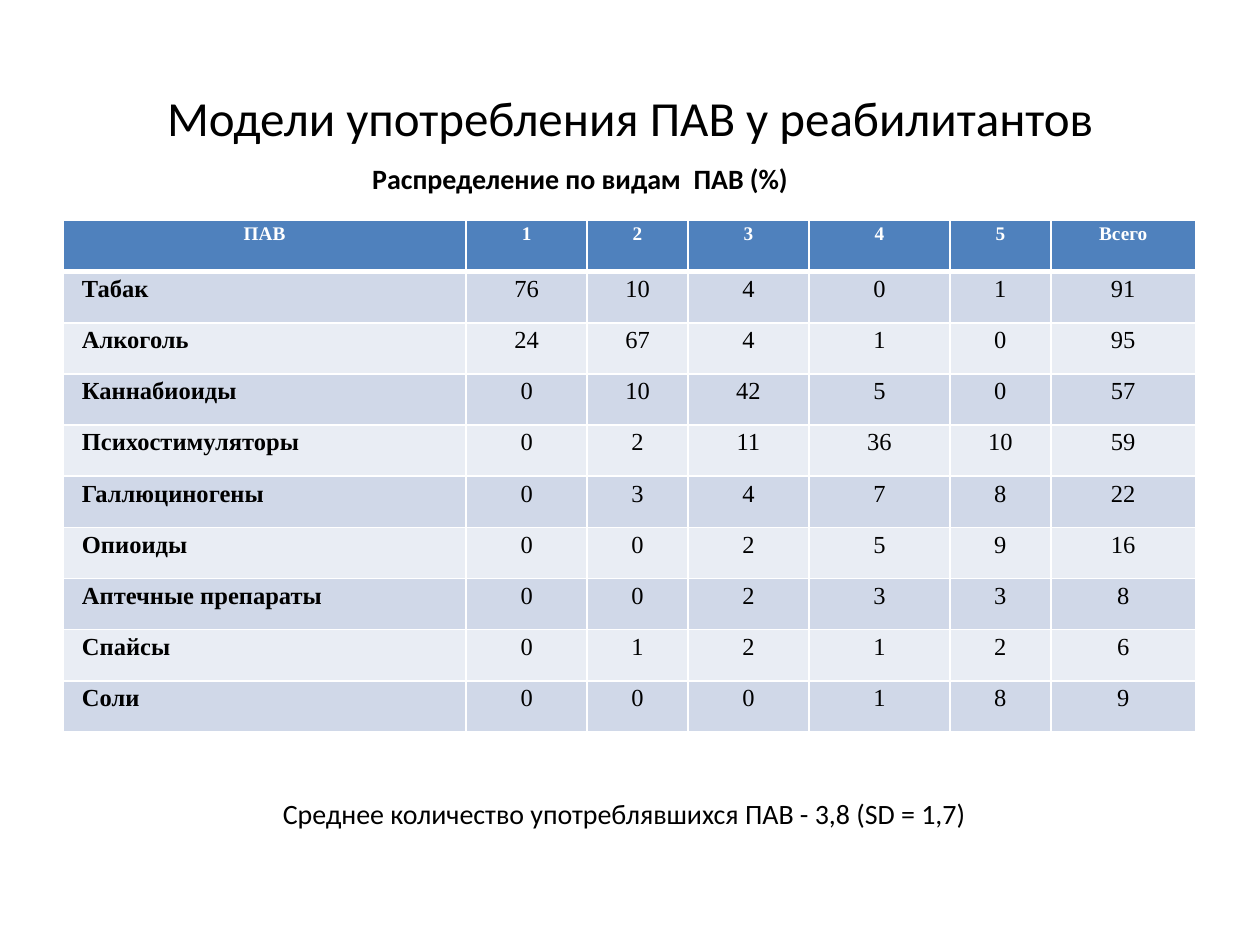
from lxml.etree import SubElement
from pptx import Presentation
from pptx.dml.color import RGBColor
from pptx.enum.text import MSO_ANCHOR as Anchor, PP_ALIGN as Align
from pptx.oxml.ns import qn
from pptx.util import Inches, Pt

COLORS = {
    "text": "000000",
    "header": "4F81BD",
    "odd_row": "D0D8E8",
    "even_row": "E9EDF4",
    "white": "FFFFFF",
}
HEADINGS = ["ПАВ", "1", "2", "3", "4", "5", "Всего"]
SUBSTANCES = [
    ("Табак", 76, 10, 4, 0, 1, 91),
    ("Алкоголь", 24, 67, 4, 1, 0, 95),
    ("Каннабиоиды", 0, 10, 42, 5, 0, 57),
    ("Психостимуляторы", 0, 2, 11, 36, 10, 59),
    ("Галлюциногены", 0, 3, 4, 7, 8, 22),
    ("Опиоиды", 0, 0, 2, 5, 9, 16),
    ("Аптечные препараты", 0, 0, 2, 3, 3, 8),
    ("Спайсы", 0, 1, 2, 1, 2, 6),
    ("Соли", 0, 0, 0, 1, 8, 9),
]
COLUMN_WIDTHS = [3.2, 0.96, 0.8, 0.96, 1.12, 0.8, 1.15]
TABLE_HEIGHT = 4.06


def color(name):
    return RGBColor.from_string(COLORS[name])


def write(frame, text, size, bold=False, font="Calibri", ink="text", align=Align.CENTER):
    frame.text = text
    para = frame.paragraphs[0]
    para.alignment = align
    para.font.name = font
    para.font.size = Pt(size)
    para.font.bold = bold
    para.font.color.rgb = color(ink)
    return para


def add_title(page, text):
    title = page.shapes.title
    title.left, title.top = Inches(0.5), Inches(0.3)
    title.width, title.height = Inches(9), Inches(1.25)
    title.text_frame.vertical_anchor = Anchor.MIDDLE
    write(title.text_frame, text, 28)


def add_caption(page, text, left, top, width, bold=False):
    box = page.shapes.add_textbox(Inches(left), Inches(top), Inches(width), Inches(0.37))
    box.text_frame.word_wrap = True
    write(box.text_frame, text, 16, bold)


def set_borders(cell, top, bottom):
    """Draw white cell edges; top and bottom are widths in points."""
    properties = cell._tc.get_or_add_tcPr()
    for side, width in (("L", 1), ("R", 1), ("T", top), ("B", bottom)):
        line = SubElement(properties, qn(f"a:ln{side}"), w=str(Pt(width)))
        fill = SubElement(line, qn("a:solidFill"))
        SubElement(fill, qn("a:srgbClr"), val=COLORS["white"])


def format_cell(cell, text, row, column):
    is_header = row == 0
    set_borders(cell, top=3 if row == 1 else 1, bottom=3 if is_header else 1)
    cell.fill.solid()
    band = "odd_row" if row % 2 else "even_row"
    cell.fill.fore_color.rgb = color("header" if is_header else band)
    cell.margin_left = cell.margin_right = Inches(0.15)
    cell.margin_top = cell.margin_bottom = 0
    para = write(
        cell.text_frame,
        text,
        size=11 if is_header else 14,
        bold=is_header or column == 0,
        font="Times New Roman",
        ink="white" if is_header else "text",
        align=Align.CENTER if is_header or column else Align.LEFT,
    )
    para.line_spacing = 1.15


def add_substance_table(page):
    rows = [HEADINGS, *SUBSTANCES]
    frame = page.shapes.add_table(
        len(rows), len(HEADINGS),
        Inches(0.5), Inches(1.75), Inches(sum(COLUMN_WIDTHS)), Inches(TABLE_HEIGHT),
    )
    table = frame.table
    for column, width in zip(table.columns, COLUMN_WIDTHS):
        column.width = Inches(width)
    for row, values in enumerate(rows):
        table.rows[row].height = Inches(TABLE_HEIGHT / len(rows))
        for column, value in enumerate(values):
            format_cell(table.cell(row, column), str(value), row, column)


def main():
    deck = Presentation()
    deck.slide_width, deck.slide_height = Inches(10), Inches(7.5)
    page = deck.slides.add_slide(deck.slide_layouts[5])
    add_title(page, "Модели употребления ПАВ у реабилитантов")
    add_substance_table(page)
    add_caption(page, "Распределение по видам  ПАВ (%)", 2.32, 1.23, 4.57, bold=True)
    add_caption(page, "Среднее количество употреблявшихся ПАВ - 3,8 (SD = 1,7)", 1.61, 6.27, 6.69)
    deck.save("out.pptx")


if __name__ == "__main__":
    main()
